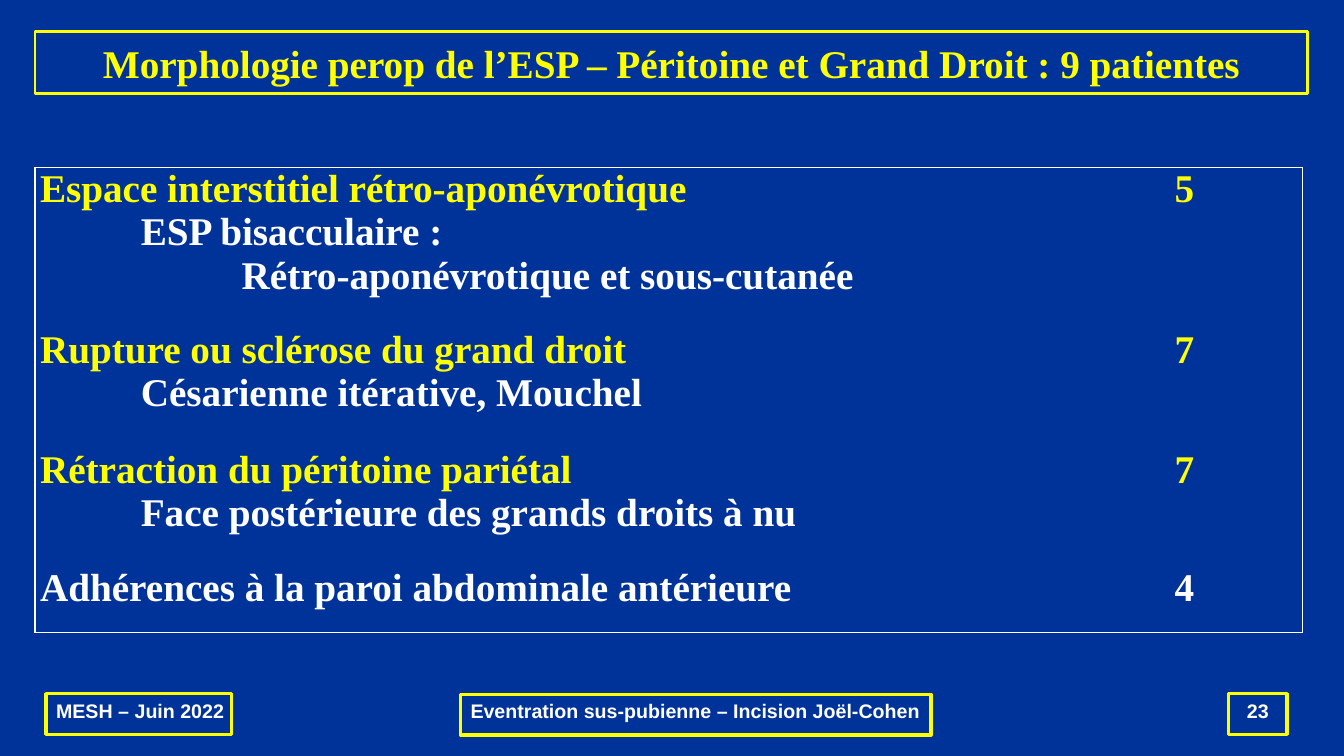
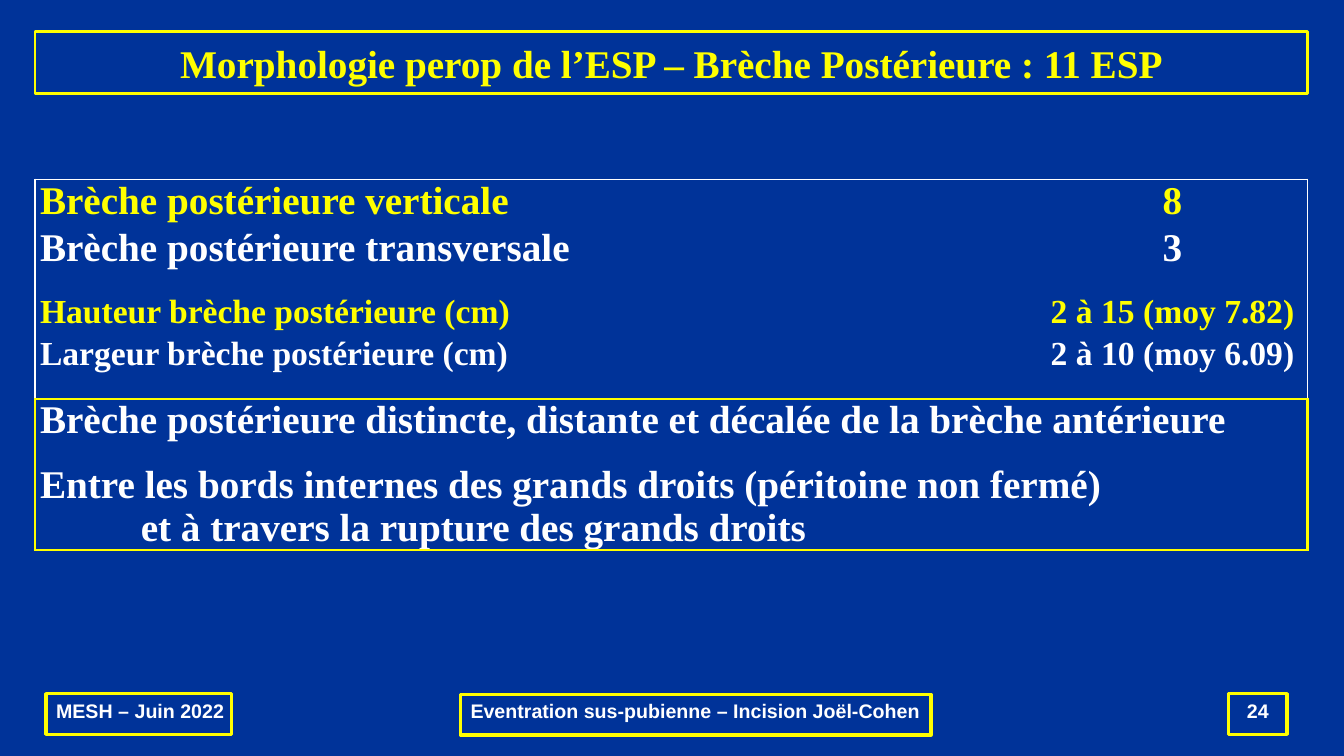
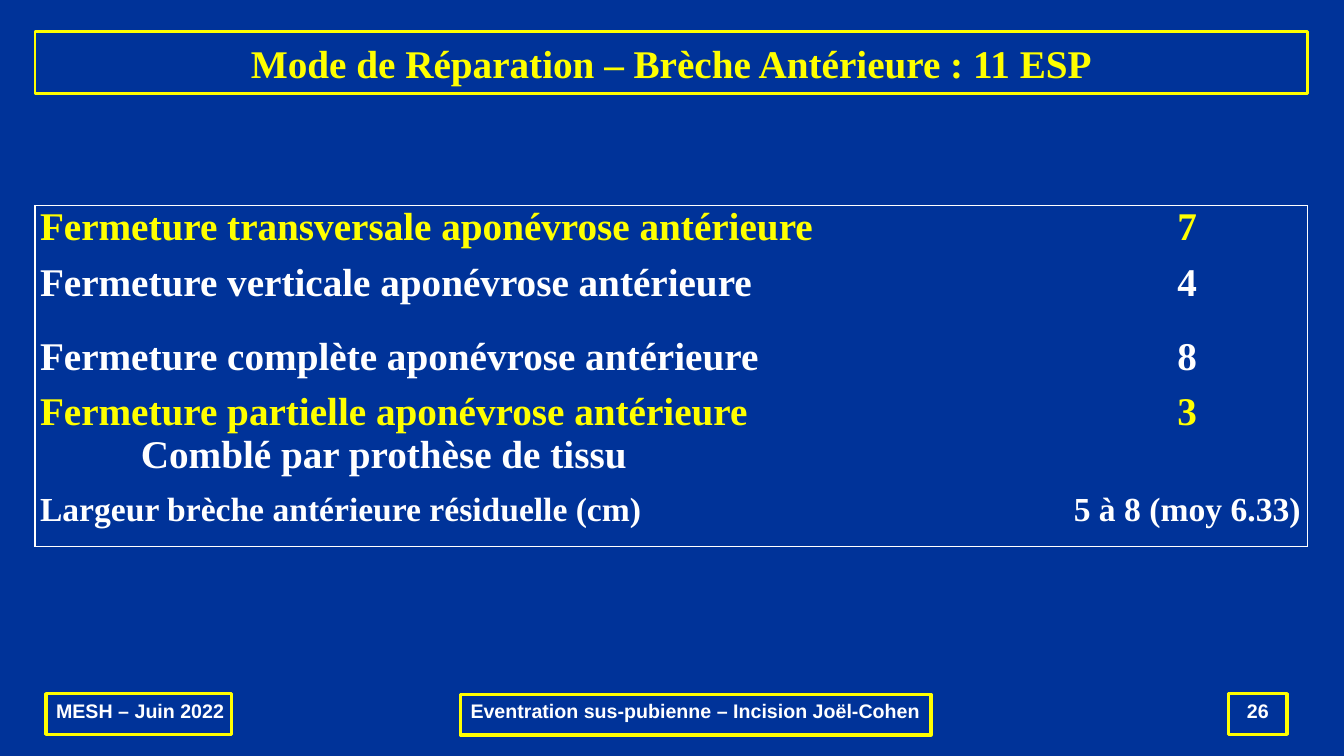
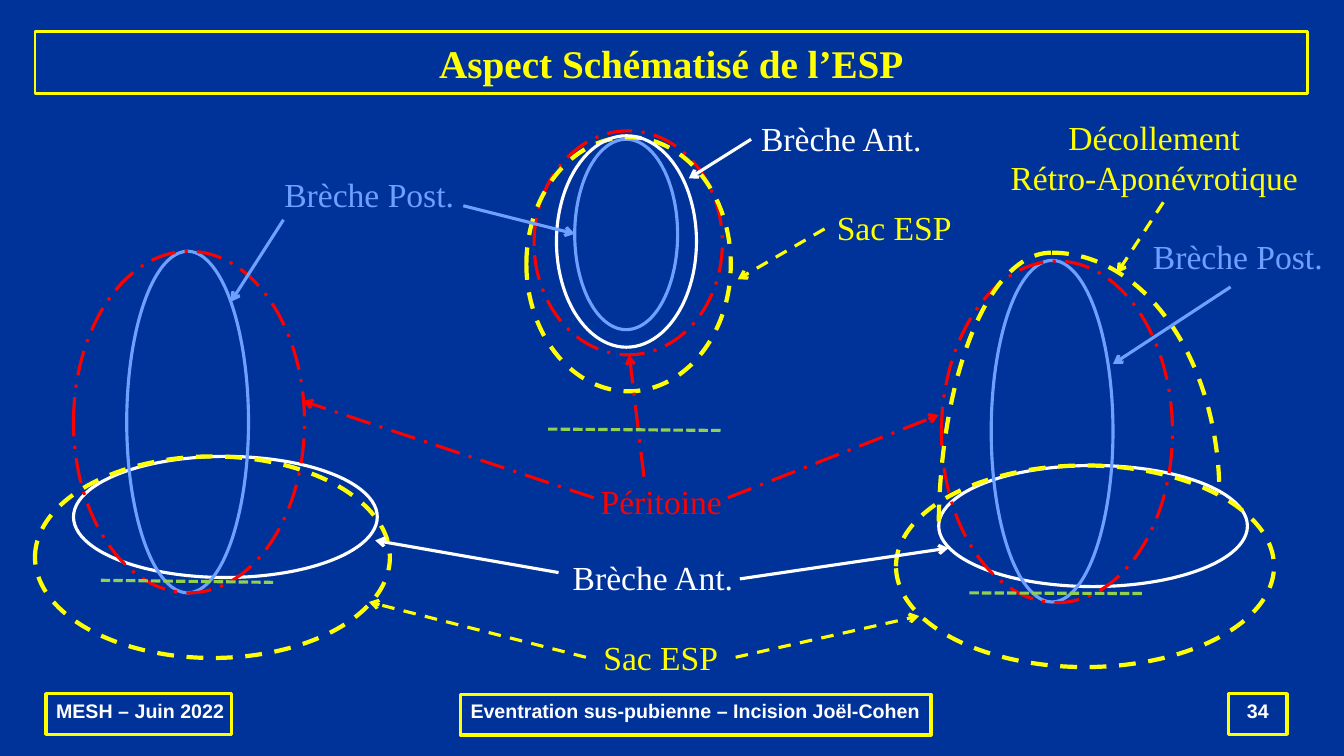
import lxml.etree
import pptx
import pptx.dml.color
import pptx.enum.dml
import pptx.enum.shapes
import pptx.enum.text
import pptx.oxml.ns
import pptx.util

Pt = pptx.util.Pt
qn = pptx.oxml.ns.qn
rgb = pptx.dml.color.RGBColor.from_string
ALIGN = pptx.enum.text.PP_ALIGN
ANCHOR = pptx.enum.text.MSO_ANCHOR
SHAPE = pptx.enum.shapes.MSO_SHAPE
DASH = pptx.enum.dml.MSO_LINE

NAVY, YELLOW, WHITE = "003399", "FFFF00", "FFFFFF"
BLUE, RED, GREEN = "70A0FF", "FF0000", "92D050"
SERIF, SANS = "Times New Roman", "Arial"
NO_STYLE_TABLE = "{2D5ABB26-0587-4C30-8999-92F81FD0307C}"
DASHES = {YELLOW: DASH.DASH, RED: DASH.LONG_DASH_DOT, GREEN: DASH.SQUARE_DOT}


def write(frame, text, font=SERIF, size=28, color=WHITE, bold=True, align=ALIGN.LEFT, indent=0):
    """Put text in the first paragraph if it is empty, otherwise in a new one."""
    para = frame.paragraphs[0] if not frame.text else frame.add_paragraph()
    para.alignment = align
    if indent:
        para._p.get_or_add_pPr().set("marL", str(Pt(indent)))
    span = para.add_run()
    span.text = text
    span.font.name, span.font.size, span.font.bold = font, Pt(size), bold
    span.font.color.rgb = rgb(color)


def outline(shape, color, width, dash=None):
    """Leave only the contour of a shape or a connector."""
    shape.line.color.rgb = rgb(color)
    shape.line.width = Pt(width)
    if dash:
        shape.line.dash_style = dash
    if hasattr(shape, "fill"):
        shape.fill.background()
        shape.shadow.inherit = False
    else:
        lxml.etree.SubElement(shape._element.spPr, qn("a:effectLst"))


deck = pptx.Presentation()
deck.slide_width, deck.slide_height = Pt(960), Pt(540)
background = deck.slide_master.background.fill
background.solid()
background.fore_color.rgb = rgb(NAVY)
title_only = deck.slide_layouts[5]

# Titles and footers
titles = {
    23: "Morphologie perop de l’ESP – Péritoine et Grand Droit : 9 patientes",
    24: "Morphologie perop de l’ESP – Brèche Postérieure : 11 ESP",
    26: "Mode de Réparation – Brèche Antérieure : 11 ESP",
    34: "Aspect Schématisé de l’ESP",
}
pages = {}
for number, heading in titles.items():
    page = pages[number] = deck.slides.add_slide(title_only)
    title = page.shapes.title
    title.left, title.top, title.width, title.height = map(Pt, (25, 22.5, 909, 44.5))
    outline(title, YELLOW, 2)
    frame = title.text_frame
    frame.auto_size = pptx.enum.text.MSO_AUTO_SIZE.NONE
    frame.vertical_anchor = ANCHOR.MIDDLE
    frame.margin_left = frame.margin_right = frame.margin_top = frame.margin_bottom = Pt(4.5)
    write(frame, heading, color=YELLOW, align=ALIGN.CENTER)

    footers = [
        ("MESH – Juin 2022", (33, 495.5, 132.5, 29), ALIGN.LEFT),
        ("Eventration sus-pubienne – Incision Joël-Cohen", (329, 496, 336, 29), ALIGN.LEFT),
        (str(number), (877.5, 495.5, 42, 29), ALIGN.CENTER),
    ]
    for text, place, align in footers:
        box = page.shapes.add_shape(SHAPE.RECTANGLE, *map(Pt, place))
        outline(box, YELLOW, 2.5)
        box.text_frame.word_wrap = False
        box.text_frame.vertical_anchor = ANCHOR.TOP
        write(box.text_frame, text, font=SANS, size=14, align=align)

# Tables. Row: height, colour, size, value, label, then (indent, text) of white sub-lines.
# Frame: first row, last row, colour, width.
tables = [
    (23, 119.5, (736.5, 169), [(0, 3, WHITE, 1)], [
        (115, YELLOW, 28, "5", "Espace interstitiel rétro-aponévrotique",
         (72, "ESP bisacculaire :"), (144, "Rétro-aponévrotique et sous-cutanée")),
        (86, YELLOW, 28, "7", "Rupture ou sclérose du grand droit",
         (72, "Césarienne itérative, Mouchel")),
        (84, YELLOW, 28, "7", "Rétraction du péritoine pariétal",
         (72, "Face postérieure des grands droits à nu")),
        (47.5, WHITE, 28, "4", "Adhérences à la paroi abdominale antérieure"),
    ]),
    (24, 128, (716, 193), [(0, 3, WHITE, 1), (4, 5, YELLOW, 2.25)], [
        (34, YELLOW, 28, "8", "Brèche postérieure verticale"),
        (47.5, WHITE, 28, "3", "Brèche postérieure transversale"),
        (30, YELLOW, 24, "2 à 15 (moy 7.82)", "Hauteur brèche postérieure (cm)"),
        (45.5, WHITE, 24, "2 à 10 (moy 6.09)", "Largeur brèche postérieure (cm)"),
        (46, WHITE, 28, None,
         "Brèche postérieure distincte, distante et décalée de la brèche antérieure"),
        (62, WHITE, 28, None, "Entre les bords internes des grands droits (péritoine non fermé)",
         (72, "et à travers la rupture des grands droits")),
    ]),
    (26, 147, (737, 172), [(0, 4, WHITE, 1)], [
        (39.5, YELLOW, 28, "7", "Fermeture transversale aponévrose antérieure"),
        (53, WHITE, 28, "4", "Fermeture verticale aponévrose antérieure"),
        (39.5, WHITE, 28, "8", "Fermeture complète aponévrose antérieure"),
        (72, YELLOW, 28, "3", "Fermeture partielle aponévrose antérieure",
         (72, "Comblé par prothèse de tissu")),
        (39.5, WHITE, 24, "5 à 8 (moy 6.33)", "Largeur brèche antérieure résiduelle (cm)"),
    ]),
]
for number, top, widths, frames, rows in tables:
    height = sum(row[0] for row in rows)
    table = pages[number].shapes.add_table(
        len(rows), 2, Pt(25), Pt(top), Pt(sum(widths)), Pt(height)).table
    table.first_row = table.horz_banding = False
    table._tbl.tblPr.find(qn("a:tableStyleId")).text = NO_STYLE_TABLE
    for column, width in zip(table.columns, widths):
        column.width = Pt(width)

    for index, (height, color, size, value, label, *details) in enumerate(rows):
        table.rows[index].height = Pt(height)
        left_cell, right_cell = table.cell(index, 0), table.cell(index, 1)
        write(left_cell.text_frame, label, color=color, size=size)
        for indent, text in details:
            write(left_cell.text_frame, text, size=size, indent=indent)
        if value:
            write(right_cell.text_frame, value, color=color, size=size, align=ALIGN.CENTER)
        else:
            left_cell.merge(right_cell)

        band = next(i for i, (first, last, *_) in enumerate(frames) if first <= index <= last)
        first, last, *pen = frames[band]
        pen_below = frames[min(band + 1, len(frames) - 1)][2:]
        for cell in (left_cell, right_cell):
            cell.margin_left = cell.margin_right = Pt(3.6)
            cell.margin_top = cell.margin_bottom = 0
            edges = {
                "a:lnL": pen if cell is left_cell or not value else None,
                "a:lnR": pen if cell is right_cell or not value else None,
                "a:lnT": pen if index == first else None,
                "a:lnB": pen_below if index == last else None,
            }
            properties = cell._tc.get_or_add_tcPr()
            for tag, edge in edges.items():
                border = lxml.etree.SubElement(properties, qn(tag))
                if edge:
                    border.set("w", str(Pt(edge[1])))
                    fill = lxml.etree.SubElement(border, qn("a:solidFill"))
                    lxml.etree.SubElement(fill, qn("a:srgbClr")).set("val", edge[0])
                else:
                    lxml.etree.SubElement(border, qn("a:noFill"))
            cell.fill.background()

# Diagram: white = anterior breach, blue = posterior breach, red = peritoneum, yellow = sac
shapes = pages[34].shapes
contours = [
    (SHAPE.OVAL, WHITE, (52.5, 326, 217, 86.5)),
    (SHAPE.OVAL, BLUE, (90.5, 179.5, 87, 244)),
    (SHAPE.OVAL, WHITE, (670.5, 332.5, 220.5, 86.5)),
    (SHAPE.OVAL, BLUE, (708, 186, 87, 244)),
    (SHAPE.OVAL, YELLOW, (25, 326, 253.5, 144)),
    (SHAPE.OVAL, YELLOW, (640, 332.5, 270, 144)),
    (SHAPE.OVAL, RED, (52.5, 179.5, 165, 244)),
    (SHAPE.OVAL, RED, (672.5, 186.5, 165, 244)),
    (SHAPE.ARC, YELLOW, (632, 180.5, 239, 345.5)),
    (SHAPE.ARC, YELLOW, (670.5, 180.5, 160.5, 397.5)),
    (SHAPE.OVAL, BLUE, (410.5, 99.5, 73.5, 136)),
    (SHAPE.OVAL, RED, (381.5, 93.5, 134.5, 160)),
    (SHAPE.OVAL, YELLOW, (376, 98, 146, 181.5)),
    (SHAPE.OVAL, WHITE, (397.5, 97, 100, 151)),
]
for kind, color, place in contours:
    contour = shapes.add_shape(kind, *map(Pt, place))
    outline(contour, color, 3 if color == YELLOW else 2.25, DASHES.get(color))
    if kind == SHAPE.ARC and place[0] > 640:
        contour._element.spPr.xfrm.set("flipH", "1")

labels = [
    (YELLOW, ALIGN.CENTER, (418.5, 451.5, 107, 36), ["Sac ESP"]),
    (WHITE, ALIGN.LEFT, (402, 394, 131, 36), ["Brèche Ant."]),
    (RED, ALIGN.LEFT, (422, 340, 103, 36), ["Péritoine"]),
    (BLUE, ALIGN.LEFT, (196, 121, 142.5, 36), ["Brèche Post."]),
    (YELLOW, ALIGN.CENTER, (589, 144.5, 99.5, 36), ["Sac ESP"]),
    (YELLOW, ALIGN.CENTER, (708, 80, 233, 65.5), ["Décollement", "Rétro-Aponévrotique"]),
    (BLUE, ALIGN.LEFT, (816.5, 165, 142.5, 36), ["Brèche Post."]),
    (WHITE, ALIGN.LEFT, (536.5, 80.5, 131, 36), ["Brèche Ant."]),
]
for color, align, place, lines in labels:
    box = shapes.add_textbox(*map(Pt, place))
    box.text_frame.word_wrap = True
    for text in lines:
        write(box.text_frame, text, size=24, color=color, bold=False, align=align)

# Pointers have an arrowhead; the green lines have none
pointers = [
    (YELLOW, (418.5, 469.5, 263.5, 430)),
    (YELLOW, (525.5, 469.5, 656.5, 440)),
    (YELLOW, (589, 163.5, 527, 199.5)),
    (YELLOW, (831, 144.5, 798, 195)),
    (WHITE, (399, 409, 268, 386)),
    (WHITE, (528.5, 413.5, 677.5, 391.5)),
    (WHITE, (536.5, 99.5, 492, 127.5)),
    (RED, (424, 355.5, 216.5, 286.5)),
    (RED, (520, 355.5, 670.5, 296.5)),
    (RED, (460, 340.5, 449.5, 253.5)),
    (BLUE, (202.5, 157, 165, 215.5)),
    (BLUE, (331, 147, 410.5, 167)),
    (BLUE, (879, 205, 795, 260)),
    (GREEN, (391.5, 306.5, 516.5, 307.5)),
    (GREEN, (72, 414.5, 196.5, 416)),
    (GREEN, (692.5, 423.5, 817, 424)),
]
for color, ends in pointers:
    pointer = shapes.add_connector(pptx.enum.shapes.MSO_CONNECTOR.STRAIGHT, *map(Pt, ends))
    outline(pointer, color, 2.25, DASHES.get(color))
    if color != GREEN:
        line = pointer._element.spPr.find(qn("a:ln"))
        lxml.etree.SubElement(line, qn("a:tailEnd")).set("type", "arrow")

deck.save("out.pptx")
